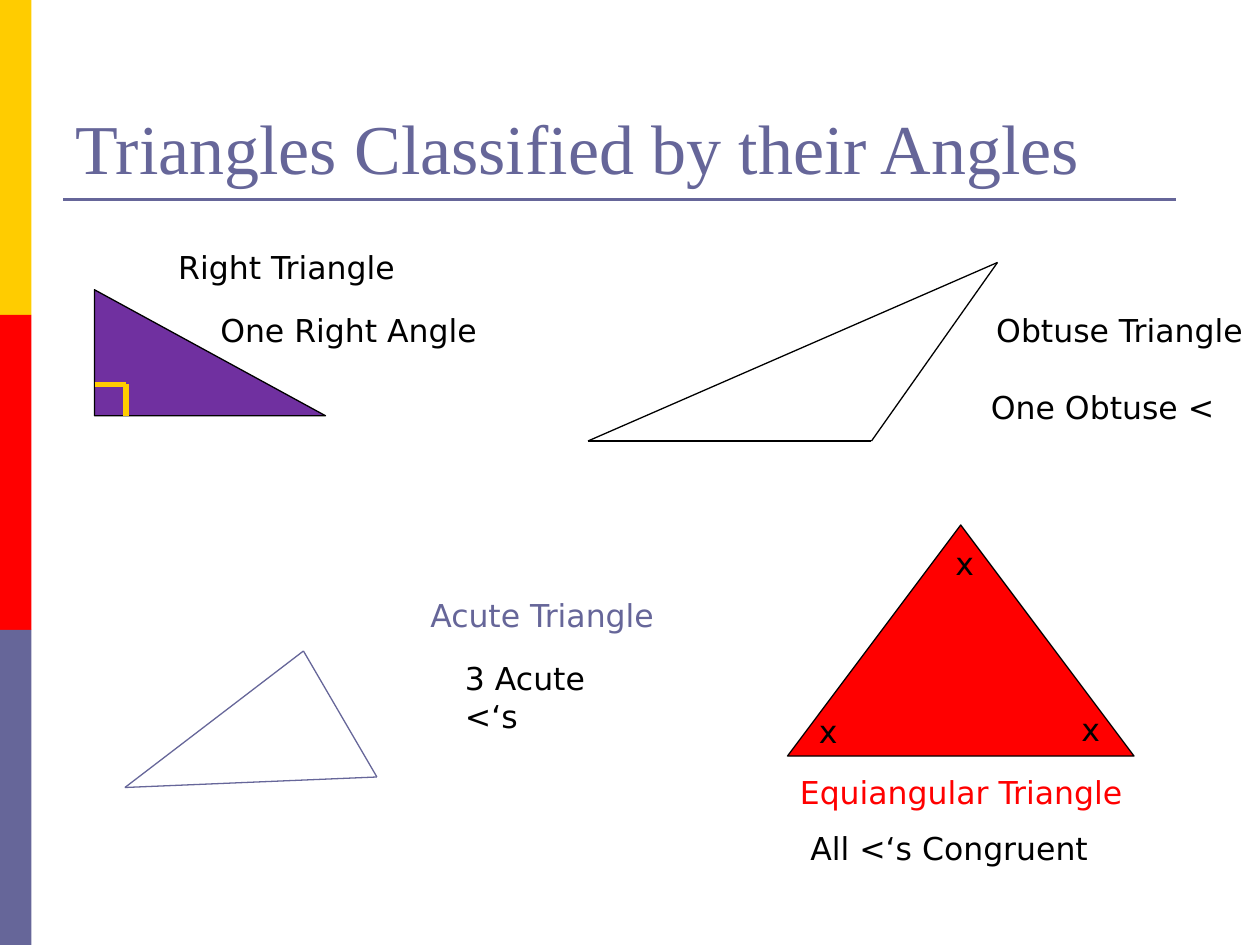
import pptx
import pptx.dml.color
import pptx.enum.shapes
import pptx.enum.text
import pptx.oxml.ns
import pptx.util
from lxml import etree

COLUMNS, ROWS = 120, 90
COLORS = {
    "slate": "666699",
    "gold": "FFCC00",
    "red": "FF0000",
    "purple": "7030A0",
    "black": "000000",
}
SHAPES = pptx.enum.shapes.MSO_SHAPE
ANCHORS = pptx.enum.text.MSO_ANCHOR


def grid(units):
    """Turn grid units, twelve to the inch, into a length."""
    return pptx.util.Inches(units / 12)


def rgb(color):
    """Look up a named colour."""
    return pptx.dml.color.RGBColor.from_string(COLORS[color])


def write(frame, text, font="DejaVu Sans", size=18, color="black", wrap=False,
          anchor=ANCHORS.TOP):
    """Fill a text frame with one formatted, left-aligned paragraph."""
    frame.word_wrap = wrap
    frame.auto_size = pptx.enum.text.MSO_AUTO_SIZE.NONE
    frame.vertical_anchor = anchor
    paragraph = frame.paragraphs[0]
    paragraph.alignment = pptx.enum.text.PP_ALIGN.LEFT
    run = paragraph.add_run()
    run.text = text
    run.font.name = font
    run.font.size = pptx.util.Pt(size)
    run.font.color.rgb = rgb(color)


def add_label(slide, box, offset, width, text, **style):
    """Place a one-line label at an offset within a region."""
    label = slide.shapes.add_textbox(
        grid(box[0] + offset[0]), grid(box[1] + offset[1]), grid(width), grid(4.8))
    write(label.text_frame, text, **style)


def add_solid(slide, preset, box, fill, outlined=True):
    """Place a filled preset shape."""
    solid = slide.shapes.add_shape(preset, *map(grid, box))
    solid.shadow.inherit = False
    solid.fill.solid()
    solid.fill.fore_color.rgb = rgb(fill)
    if outlined:
        solid.line.color.rgb = rgb("black")
        solid.line.width = pptx.util.Pt(0.75)
    else:
        solid.line.fill.background()


def add_path(slide, box, points, color, width=0.75):
    """Join successive points of a region with straight lines."""
    for start, end in zip(points, points[1:]):
        side = slide.shapes.add_connector(
            pptx.enum.shapes.MSO_CONNECTOR.STRAIGHT,
            grid(box[0] + start[0]), grid(box[1] + start[1]),
            grid(box[0] + end[0]), grid(box[1] + end[1]))
        side.line.color.rgb = rgb(color)
        side.line.width = pptx.util.Pt(width)
        etree.SubElement(side._element.spPr, pptx.oxml.ns.qn("a:effectLst"))


def add_side_bands(slide, box):
    """Stack three equal colour bands."""
    left, top, width, height = box
    bands = ("gold", "red", "slate")
    band_height = height / len(bands)
    for index, color in enumerate(bands):
        add_solid(slide, SHAPES.RECTANGLE,
                  (left, top + index * band_height, width, band_height),
                  color, outlined=False)


def add_heading(slide, box):
    """Place the title and the rule beneath it."""
    title = slide.shapes.title
    title.left, title.top, title.width, title.height = map(grid, box)
    write(title.text_frame, "Triangles Classified by their Angles",
          font="Times New Roman", size=40, color="slate", wrap=True,
          anchor=ANCHORS.BOTTOM)
    rule_row = box[3] + 0.4
    add_path(slide, box, [(0, rule_row), (box[2] - 2, rule_row)], "slate", 1.5)


def add_right_triangle(slide, box):
    """Draw the right triangle with its corner mark."""
    left, top, width, height = box
    add_solid(slide, SHAPES.RIGHT_TRIANGLE, box, "purple")
    add_label(slide, box, (6.8, -4.6), 23.5, "Right Triangle")
    add_label(slide, box, (10.8, 1.4), 26.9, "One Right Angle")
    mark = 3
    add_path(slide, box,
             [(0, height - mark), (mark, height - mark), (mark, height)],
             "gold", 3)


def add_obtuse_triangle(slide, box):
    """Draw the obtuse triangle and its labels."""
    width, height = box[2:]
    add_path(slide, box, [(0, height), (width, 0), (27, height), (0, height)],
             "black")
    add_label(slide, box, (37.7, 4), 26.3, "Obtuse Triangle")
    add_label(slide, box, (37.2, 11.4), 23.8, "One Obtuse <")


def add_acute_triangle(slide, box):
    """Draw the acute triangle and its labels."""
    width, height = box[2:]
    add_path(slide, box,
             [(0, height), (17, 0), (width, height - 1), (0, height)], "slate")
    add_label(slide, box, (27.9, -5.8), 24.1, "Acute Triangle", color="slate")
    add_label(slide, box, (31.2, 0.2), 18, "3 Acute <‘s", wrap=True)


def add_equiangular_triangle(slide, box):
    """Draw the equiangular triangle with its marked angles."""
    height = box[3]
    add_solid(slide, SHAPES.ISOSCELES_TRIANGLE, box, "red")
    add_label(slide, box, (0, height + 1), 33.5, "Equiangular Triangle", color="red")
    add_label(slide, box, (1, height + 6.4), 28.8, "All <‘s Congruent")
    for corner in ((1.8, 17.2), (26.8, 17), (14.8, 1.2)):
        add_label(slide, box, corner, 4.2, "x")


def main():
    """Build and save the slide."""
    deck = pptx.Presentation()
    deck.slide_width, deck.slide_height = grid(COLUMNS), grid(ROWS)
    slide = deck.slides.add_slide(deck.slide_layouts[5])
    add_side_bands(slide, (0, 0, 3, ROWS))
    add_heading(slide, (6, 3.6, 108, 15))
    add_right_triangle(slide, (9, 27.6, 22, 12))
    add_obtuse_triangle(slide, (56, 25, 39, 17))
    add_acute_triangle(slide, (11.9, 62, 24, 13))
    add_equiangular_triangle(slide, (75, 50, 33, 22))
    deck.save("out.pptx")


if __name__ == "__main__":
    main()
